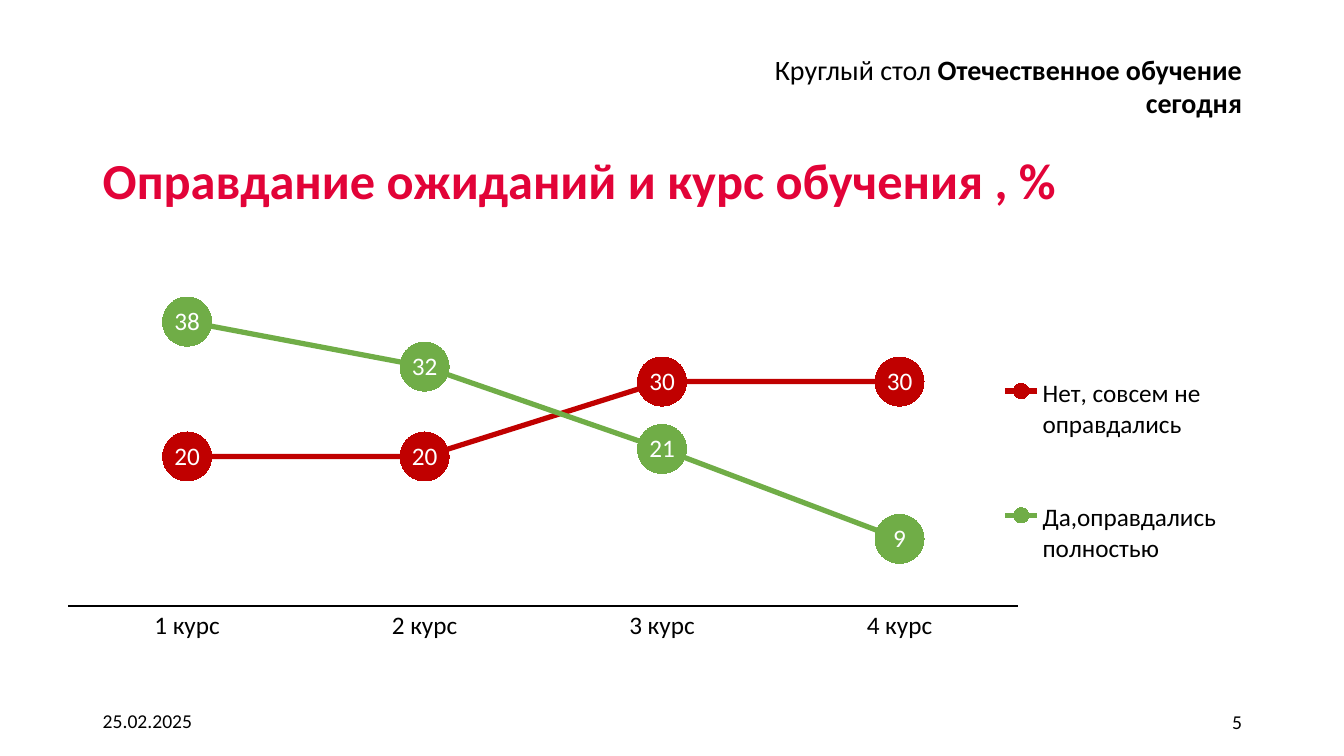
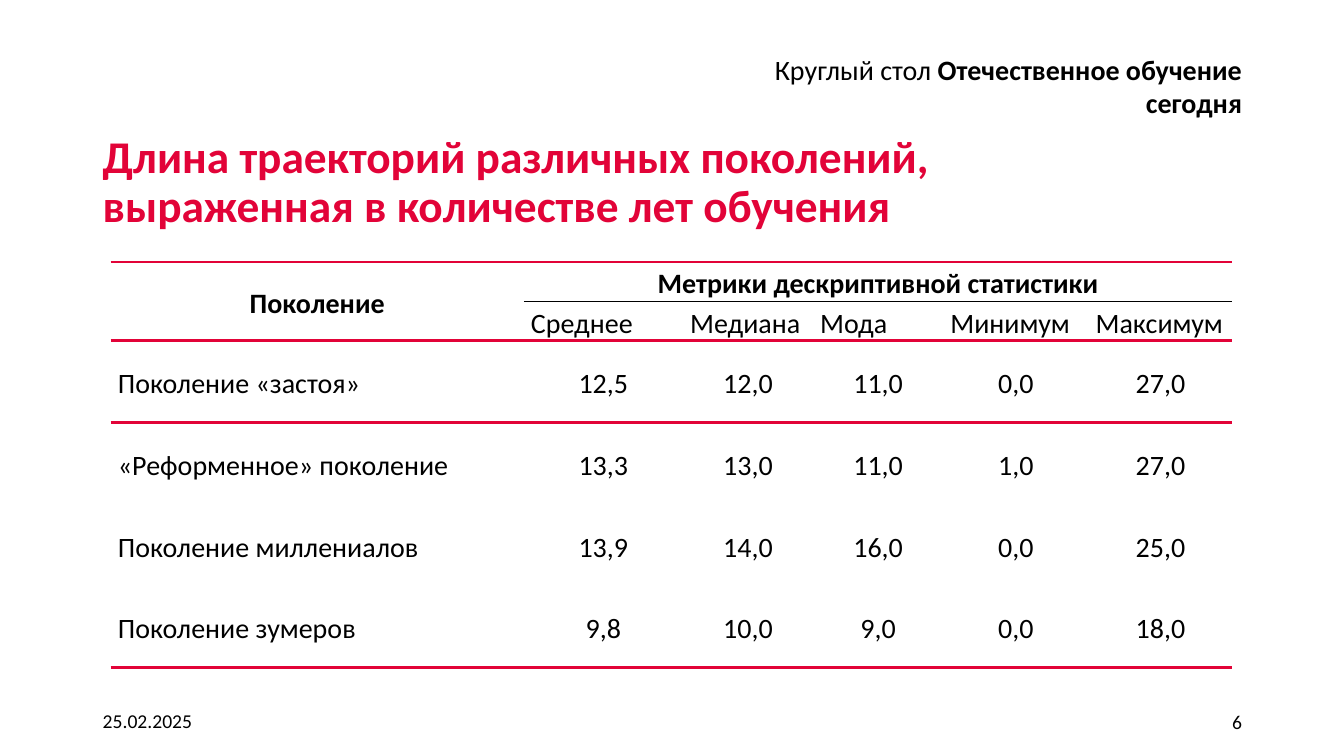
from dataclasses import dataclass

from lxml import etree
from pptx import Presentation
from pptx.chart.data import CategoryChartData
from pptx.dml.color import RGBColor
from pptx.enum.chart import XL_CHART_TYPE, XL_LABEL_POSITION, XL_LEGEND_POSITION, XL_MARKER_STYLE, XL_TICK_MARK
from pptx.enum.text import MSO_ANCHOR, PP_ALIGN
from pptx.oxml.ns import qn
from pptx.util import Cm, Pt

LEFT, CENTER, RIGHT, JUSTIFY = PP_ALIGN.LEFT, PP_ALIGN.CENTER, PP_ALIGN.RIGHT, PP_ALIGN.JUSTIFY
TOP, MIDDLE = MSO_ANCHOR.TOP, MSO_ANCHOR.MIDDLE
LINE_MARKERS = XL_CHART_TYPE.LINE_MARKERS
LABEL_CENTER = XL_LABEL_POSITION.CENTER
LEGEND_RIGHT = XL_LEGEND_POSITION.RIGHT
CIRCLE = XL_MARKER_STYLE.CIRCLE
NO_TICKS = XL_TICK_MARK.NONE

FONT = "Calibri"
BLACK, WHITE, ACCENT = "000000", "FFFFFF", "E20338"
RED, GREEN = "C00000", "70AD47"
PLAIN_TABLE_STYLE = "{2D5ABB26-0587-4C30-8999-92F81FD0307C}"
EVENT, EVENT_NAME = "Круглый стол ", "Отечественное обучение сегодня"
DATE = "25.02.2025"


@dataclass(frozen=True)
class Box:
    """Place and size in centimetres."""
    left: float
    top: float
    width: float
    height: float

    def lengths(self):
        return Cm(self.left), Cm(self.top), Cm(self.width), Cm(self.height)


@dataclass(frozen=True)
class TextStyle:
    size: float
    color: str = BLACK
    bold: bool | None = None
    align: PP_ALIGN = LEFT
    anchor: MSO_ANCHOR = MIDDLE
    line_spacing: float | None = None


@dataclass(frozen=True)
class Series:
    name: str
    values: tuple
    color: str


@dataclass(frozen=True)
class Border:
    side: str
    color: str = ACCENT
    width: float = 2.25


HEADER_STYLE = TextStyle(20, align=RIGHT, anchor=TOP)
DATE_STYLE = TextStyle(14)
NUMBER_STYLE = TextStyle(14, align=RIGHT)

COURSES = ("1 курс", "2 курс", "3 курс", "4 курс")
EXPECTATIONS = (
    Series("Нет, совсем не оправдались", (20, 20, 30, 30), RED),
    Series("Да,оправдались полностью", (38, 32, 21, 9), GREEN),
)

COLUMN_WIDTHS = (10.41, 4.01, 3.28, 3.28, 3.66, 3.63)
ROW_HEIGHTS = (0.99, 0.99, 2.06, 2.06, 2.06, 2.06)
TABLE_ROWS = (
    ("Поколение", "Метрики дескриптивной статистики", "", "", "", ""),
    ("", "Среднее", "Медиана", "Мода", "Минимум", "Максимум"),
    ("Поколение «застоя»", "12,5", "12,0", "11,0", "0,0", "27,0"),
    ("«Реформенное» поколение", "13,3", "13,0", "11,0", "1,0", "27,0"),
    ("Поколение миллениалов", "13,9", "14,0", "16,0", "0,0", "25,0"),
    ("Поколение зумеров", "9,8", "10,0", "9,0", "0,0", "18,0"),
)
THICK_TOP, THICK_BOTTOM = Border("T"), Border("B")
ROW_BORDERS = {
    0: (THICK_TOP, Border("B", BLACK, 0.5)),
    1: (Border("T", BLACK, 0.5), THICK_BOTTOM),
    2: (THICK_TOP, THICK_BOTTOM),
    5: (THICK_BOTTOM,),
}


def rgb(color: str) -> RGBColor:
    return RGBColor.from_string(color)


def set_font(font, size: float, color: str, bold: bool | None = None) -> None:
    font.name = FONT
    font.size = Pt(size)
    font.color.rgb = rgb(color)
    font.bold = bold


def style_paragraph(paragraph, style: TextStyle) -> None:
    paragraph.alignment = style.align
    if style.line_spacing:
        paragraph.line_spacing = style.line_spacing
    set_font(paragraph.font, style.size, style.color, style.bold)


def add_text(slide, box: Box, text: str, style: TextStyle, bold_tail: str = "") -> None:
    frame = slide.shapes.add_textbox(*box.lengths()).text_frame
    frame.word_wrap = True
    frame.vertical_anchor = style.anchor
    paragraph = frame.paragraphs[0]
    paragraph.add_run().text = text
    if bold_tail:
        run = paragraph.add_run()
        run.text = bold_tail
        run.font.bold = True
    style_paragraph(paragraph, style)


def add_slide(presentation, number: int, title: str, title_size: float, title_width: float):
    """Add a blank slide with the shared header, footer and title."""
    slide = presentation.slides.add_slide(presentation.slide_layouts[6])
    add_text(slide, Box(16.94, 1.19, 14.61, 1.12), EVENT, HEADER_STYLE, EVENT_NAME)
    add_text(slide, Box(2.34, 17.65, 7.62, 1.02), DATE, DATE_STYLE)
    add_text(slide, Box(23.93, 17.68, 7.62, 1.02), str(number), NUMBER_STYLE)
    title_style = TextStyle(title_size, ACCENT, bold=True, line_spacing=0.9)
    add_text(slide, Box(2.34, 3.18, title_width, 2.87), title, title_style)
    return slide


def set_layout(parent, index: int, inner: bool, **fractions: float) -> None:
    """Fix the place of a chart part, in fractions of the chart."""
    for old_layout in parent.findall(qn("c:layout")):
        parent.remove(old_layout)
    layout = etree.Element(qn("c:layout"))
    manual = etree.SubElement(layout, qn("c:manualLayout"))
    if inner:
        etree.SubElement(manual, qn("c:layoutTarget"), val="inner")
    for mode in ("xMode", "yMode"):
        etree.SubElement(manual, qn(f"c:{mode}"), val="edge")
    for name, fraction in fractions.items():
        etree.SubElement(manual, qn(f"c:{name}"), val=str(fraction))
    parent.insert(index, layout)


def add_expectations_chart(slide) -> None:
    data = CategoryChartData(number_format="#,##0")
    data.categories = COURSES
    for series in EXPECTATIONS:
        data.add_series(series.name, series.values)
    box = Box(0.79, 6.05, 31.09, 10.49)
    chart = slide.shapes.add_chart(LINE_MARKERS, *box.lengths(), data).chart
    chart.has_title = False
    set_font(chart.font, 18, BLACK)

    plot = chart.plots[0]
    plot.vary_by_categories = False
    for line, series in zip(plot.series, EXPECTATIONS):
        line.smooth = False
        line.format.line.color.rgb = rgb(series.color)
        line.format.line.width = Pt(3.75)
        line.marker.style = CIRCLE
        line.marker.size = 35
        line.marker.format.fill.solid()
        line.marker.format.fill.fore_color.rgb = rgb(series.color)
        line.marker.format.line.color.rgb = rgb(series.color)
        labels = line.data_labels
        labels.show_value = True
        labels.position = LABEL_CENTER
        labels.number_format = "#,##0"
        labels.number_format_is_linked = False
        set_font(labels.font, 18, WHITE)

    courses = chart.category_axis
    courses.major_tick_mark = NO_TICKS
    courses.format.line.color.rgb = rgb(BLACK)
    courses.format.line.width = Pt(1.5)
    percents = chart.value_axis
    percents.visible = False
    percents.has_major_gridlines = False
    percents.minimum_scale = 0
    percents.maximum_scale = 45

    chart.has_legend = True
    legend = chart.legend
    legend.position = LEGEND_RIGHT
    legend.include_in_layout = False
    set_font(legend.font, 18, BLACK)
    plot_area = chart.element.find(f".//{qn('c:plotArea')}")
    legend_element = chart.element.find(f".//{qn('c:legend')}")
    set_layout(plot_area, 0, True, x=0.03, y=0.07, w=0.77, h=0.81)
    set_layout(legend_element, 1, False, x=0.77, y=0.18, w=0.21, h=0.75)


def add_border(cell, border: Border) -> None:
    properties = cell._tc.get_or_add_tcPr()
    line = etree.Element(qn(f"a:ln{border.side}"), w=str(Pt(border.width)))
    fill = etree.SubElement(line, qn("a:solidFill"))
    etree.SubElement(fill, qn("a:srgbClr"), val=border.color)
    properties.insert(len(properties.findall(qn("a:lnT"))), line)


def cell_style(row: int, column: int) -> TextStyle:
    centered = row == 0 or (row > 1 and column > 0)
    return TextStyle(
        20,
        bold=row == 0,
        align=CENTER if centered else JUSTIFY,
        anchor=MIDDLE if row > 1 or column == 0 else TOP,
        line_spacing=1.15,
    )


def fill_cell(cell, text: str, style: TextStyle) -> None:
    cell.margin_left = cell.margin_right = Cm(0.18)
    cell.margin_top = cell.margin_bottom = Cm(0)
    cell.vertical_anchor = style.anchor
    cell.fill.background()
    cell.text = text
    paragraph = cell.text_frame.paragraphs[0]
    paragraph.space_after = Pt(8)
    style_paragraph(paragraph, style)


def add_generations_table(slide) -> None:
    box = Box(2.79, 6.6, sum(COLUMN_WIDTHS), sum(ROW_HEIGHTS))
    table = slide.shapes.add_table(len(ROW_HEIGHTS), len(COLUMN_WIDTHS), *box.lengths()).table
    table._tbl.tblPr.find(qn("a:tableStyleId")).text = PLAIN_TABLE_STYLE
    table.first_row = table.horz_banding = False
    for column, width in zip(table.columns, COLUMN_WIDTHS):
        column.width = Cm(width)
    for row, height in zip(table.rows, ROW_HEIGHTS):
        row.height = Cm(height)
    for row, texts in enumerate(TABLE_ROWS):
        for column, text in enumerate(texts):
            cell = table.cell(row, column)
            fill_cell(cell, text, cell_style(row, column))
            borders = ROW_BORDERS.get(row, ())
            if column == 0 and row < 2:
                borders = (THICK_TOP, THICK_BOTTOM) if row == 0 else (THICK_BOTTOM,)
            for border in borders:
                add_border(cell, border)
    table.cell(0, 0).merge(table.cell(1, 0))
    table.cell(0, 1).merge(table.cell(0, len(COLUMN_WIDTHS) - 1))


def main() -> None:
    presentation = Presentation()
    presentation.slide_width = Cm(33.87)
    presentation.slide_height = Cm(19.05)
    chart_slide = add_slide(presentation, 5, "Оправдание ожиданий и курс обучения , %", 36, 29.21)
    add_expectations_chart(chart_slide)
    table_title = "Длина траекторий различных поколений, выраженная в количестве лет обучения"
    table_slide = add_slide(presentation, 6, table_title, 32.4, 25.68)
    add_generations_table(table_slide)
    presentation.save("out.pptx")


if __name__ == "__main__":
    main()
